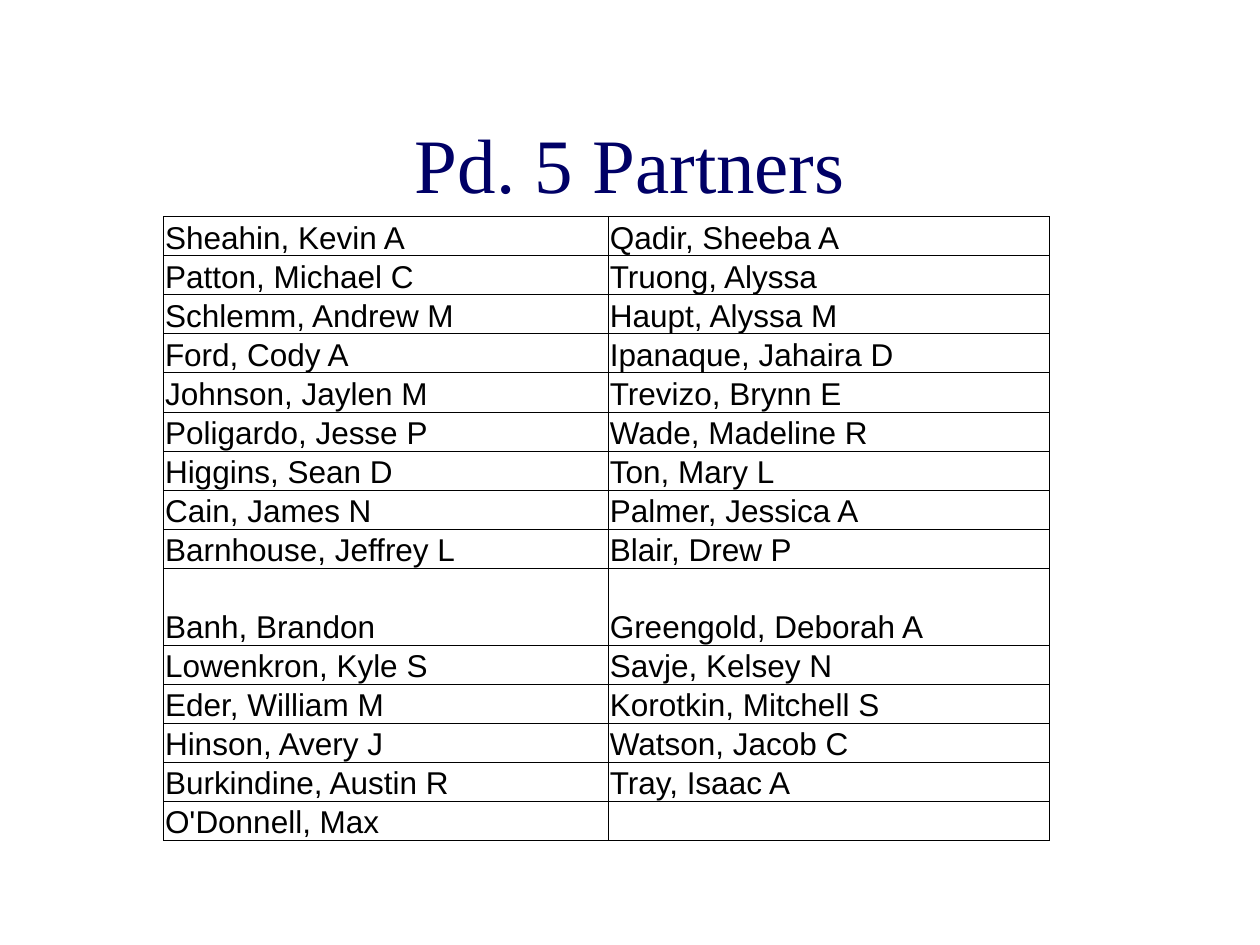
from lxml.etree import SubElement
from pptx import Presentation
from pptx.dml.color import RGBColor
from pptx.enum.text import MSO_ANCHOR, MSO_AUTO_SIZE, PP_ALIGN
from pptx.oxml.ns import qn
from pptx.util import Inches, Pt

NAVY = RGBColor(0x00, 0x00, 0x66)
BLACK = RGBColor(0x00, 0x00, 0x00)
WHITE = RGBColor(0xFF, 0xFF, 0xFF)

TITLE_FONT = {"name": "Times New Roman", "size": Pt(44)}
NAME_FONT = {"name": "Arial", "size": Pt(18)}
CELL_FORMAT = {
    "vertical_anchor": MSO_ANCHOR.BOTTOM,
    "margin_left": Inches(0.01),
    "margin_right": Inches(0.01),
    "margin_top": Inches(0.01),
    "margin_bottom": 0,
}

COLUMN_WIDTHS = [3.53, 3.5]
ROW_HEIGHT = 0.31
TALL_ROW, TALL_HEIGHT = 9, 0.61

PARTNERS = [
    ("Sheahin, Kevin A", "Qadir, Sheeba A"),
    ("Patton, Michael C", "Truong, Alyssa"),
    ("Schlemm, Andrew M", "Haupt, Alyssa M"),
    ("Ford, Cody A", "Ipanaque, Jahaira D"),
    ("Johnson, Jaylen M", "Trevizo, Brynn E"),
    ("Poligardo, Jesse P", "Wade, Madeline R"),
    ("Higgins, Sean D", "Ton, Mary L"),
    ("Cain, James N", "Palmer, Jessica A"),
    ("Barnhouse, Jeffrey L", "Blair, Drew P"),
    ("Banh, Brandon", "Greengold, Deborah A"),
    ("Lowenkron, Kyle S", "Savje, Kelsey N"),
    ("Eder, William M", "Korotkin, Mitchell S"),
    ("Hinson, Avery J", "Watson, Jacob C"),
    ("Burkindine, Austin R", "Tray, Isaac A"),
    ("O'Donnell, Max", ""),
]


def apply_format(target, values):
    for name, value in values.items():
        setattr(target, name, value)


def write_span(paragraph, text, font_format, color):
    span = paragraph.add_run()
    span.text = text
    apply_format(span.font, font_format)
    span.font.color.rgb = color


def add_title(page, text):
    box = page.shapes.title
    apply_format(box, {"left": Inches(0.75), "top": Inches(0.67),
                       "width": Inches(8.5), "height": Inches(1.25)})
    frame = box.text_frame
    apply_format(frame, {"word_wrap": True, "auto_size": MSO_AUTO_SIZE.NONE,
                         "vertical_anchor": MSO_ANCHOR.MIDDLE})
    paragraph = frame.paragraphs[0]
    paragraph.alignment = PP_ALIGN.CENTER
    write_span(paragraph, text, TITLE_FONT, NAVY)


def add_borders(cell):
    properties = cell._tc.get_or_add_tcPr()
    for side in ("lnL", "lnR", "lnT", "lnB"):
        line = SubElement(properties, qn(f"a:{side}"), w=str(Pt(0.5)))
        fill = SubElement(line, qn("a:solidFill"))
        SubElement(fill, qn("a:srgbClr"), val=str(BLACK))


def format_cell(cell, text):
    apply_format(cell, CELL_FORMAT)
    add_borders(cell)
    cell.fill.solid()
    cell.fill.fore_color.rgb = WHITE
    write_span(cell.text_frame.paragraphs[0], text, NAME_FONT, BLACK)


def add_partner_table(page, partners):
    heights = [TALL_HEIGHT if index == TALL_ROW else ROW_HEIGHT
               for index in range(len(partners))]
    table = page.shapes.add_table(
        len(partners), len(COLUMN_WIDTHS), Inches(1.3), Inches(1.72),
        Inches(sum(COLUMN_WIDTHS)), Inches(sum(heights))).table
    apply_format(table, {"first_row": False, "horz_banding": False})
    for column, width in zip(table.columns, COLUMN_WIDTHS):
        column.width = Inches(width)
    for row, height, names in zip(table.rows, heights, partners):
        row.height = Inches(height)
        for cell, name in zip(row.cells, names):
            format_cell(cell, name)


def main():
    deck = Presentation()
    apply_format(deck, {"slide_width": Inches(10), "slide_height": Inches(7.5)})
    # Title-only layout
    page = deck.slides.add_slide(deck.slide_layouts[5])
    add_title(page, "Pd. 5 Partners")
    # Partner pairs, one pair a row
    add_partner_table(page, PARTNERS)
    deck.save("out.pptx")


if __name__ == "__main__":
    main()
